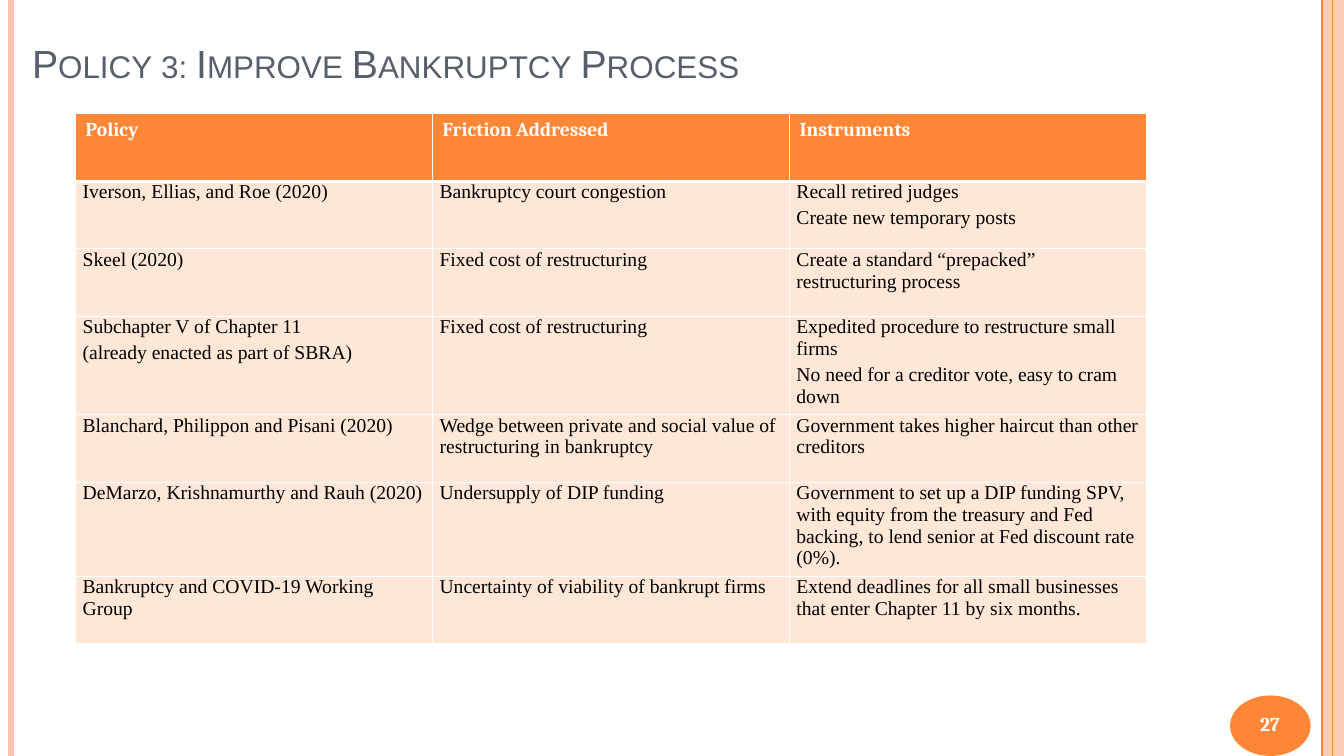
"""Build the slide on policies that improve the bankruptcy process."""
from lxml import etree
from pptx import Presentation
from pptx.dml.color import RGBColor
from pptx.enum.shapes import MSO_CONNECTOR, MSO_SHAPE
from pptx.enum.text import MSO_ANCHOR, PP_ALIGN
from pptx.oxml import parse_xml
from pptx.oxml.ns import nsdecls, qn
from pptx.util import Inches, Pt

COLORS = {"orange": "FE8637", "peach": "FEC3AE", "cell": "FFE7D7",
          "slate": "575F6D", "white": "FFFFFF", "black": "000000"}
TITLE = {"name": "Arial", "size": Pt(28), "color": "slate"}
NUMBER = {"name": "Cambria", "size": Pt(14), "bold": True, "color": "white"}
HEAD = NUMBER
BODY = {"name": "Times New Roman", "size": Pt(14), "bold": False, "color": "black"}
ROWS = [
    ["Policy", "Friction Addressed", "Instruments"],
    ["Iverson, Ellias, and Roe (2020)", "Bankruptcy court congestion",
     "Recall retired judges\nCreate new temporary posts"],
    ["Skeel (2020)", "Fixed cost of restructuring",
     "Create a standard “prepacked” restructuring process"],
    ["Subchapter V of Chapter 11\n(already enacted as part of SBRA)",
     "Fixed cost of restructuring",
     "Expedited procedure to restructure small firms\n"
     "No need for a creditor vote, easy to cram down"],
    ["Blanchard, Philippon and Pisani (2020)",
     "Wedge between private and social value of restructuring in bankruptcy",
     "Government takes higher haircut than other creditors"],
    ["DeMarzo, Krishnamurthy and Rauh (2020)", "Undersupply of DIP funding",
     "Government to set up a DIP funding SPV, with equity from the treasury "
     "and Fed backing, to lend senior at Fed discount rate (0%)."],
    ["Bankruptcy and COVID-19 Working Group",
     "Uncertainty of viability of bankrupt firms",
     "Extend deadlines for all small businesses that enter Chapter 11 by six months."],
]


def rgb(name):
    return RGBColor.from_string(COLORS[name])


def write(tf, text, style, **para):
    tf.word_wrap = True
    tf.text = text
    for p in tf.paragraphs:
        for key, value in para.items():
            setattr(p, key, value)
        for r in p.runs:
            for key, value in style.items():
                if key == "color":
                    r.font.color.rgb = rgb(value)
                else:
                    setattr(r.font, key, value)


prs = Presentation()
prs.slide_width, prs.slide_height = Inches(13.33), Inches(7.5)
s = prs.slides.add_slide(prs.slide_layouts[6])

for shape, box, color in [
    (MSO_SHAPE.RECTANGLE, (13.11, 0, 0.22, 7.5), "peach"),
    (MSO_SHAPE.OVAL, (12.2, 6.9, 0.8, 0.6), "orange"),
]:
    sp = s.shapes.add_shape(shape, *map(Inches, box))
    sp.shadow.inherit = False
    sp.fill.solid()
    sp.fill.fore_color.rgb = rgb(color)
    sp.line.fill.background()
    if shape == MSO_SHAPE.RECTANGLE:
        clr = sp.fill._xPr.find(qn("a:solidFill"))[0]
        etree.SubElement(clr, qn("a:alpha")).set("val", "87000")

for x, color, width in [(0.11, "peach", 4.5), (13.11, "orange", 1.5),
                        (13.22, "orange", 0.75)]:
    line = s.shapes.add_connector(MSO_CONNECTOR.STRAIGHT, Inches(x), 0,
                                  Inches(x), Inches(7.5))
    line.line.color.rgb = rgb(color)
    line.line.width = Pt(width)
    etree.SubElement(line._element.spPr, qn("a:effectLst"))

title = s.shapes.add_textbox(*map(Inches, (0.22, 0.13, 12.67, 0.78)))
title.text_frame.vertical_anchor = MSO_ANCHOR.BOTTOM
write(title.text_frame, "Policy 3: Improve Bankruptcy Process", TITLE)
title.text_frame.paragraphs[0].runs[0].font._element.set("cap", "small")

number = s.shapes.add_textbox(*map(Inches, (12.15, 6.89, 0.89, 0.57)))
number.text_frame.vertical_anchor = MSO_ANCHOR.MIDDLE
write(number.text_frame, "27", NUMBER, alignment=PP_ALIGN.CENTER)

table = s.shapes.add_table(len(ROWS), 3, *map(Inches, (0.75, 1.13, 10.62, 4.78))).table
for col in table.columns:
    col.width = Inches(3.54)
for i, texts in enumerate(ROWS):
    table.rows[i].height = Inches(0.76 if i == 5 else 0.67)
    for j, text in enumerate(texts):
        cell = table.cell(i, j)
        if i:
            cell.margin_left = cell.margin_right = Inches(0.07)
            cell.margin_top = cell.margin_bottom = 0
            write(cell.text_frame, text, BODY, space_after=Pt(3))
        else:
            write(cell.text_frame, text, HEAD)
        for side in "LRTB":
            width = Pt(3 if (i, side) in [(0, "B"), (1, "T")] else 1)
            cell._tc.get_or_add_tcPr().append(parse_xml(
                f'<a:ln{side} {nsdecls("a")} w="{width}"><a:solidFill>'
                f'<a:srgbClr val="{COLORS["white"]}"/></a:solidFill></a:ln{side}>'))
        cell.fill.solid()
        cell.fill.fore_color.rgb = rgb("cell" if i else "orange")

prs.save("out.pptx")
